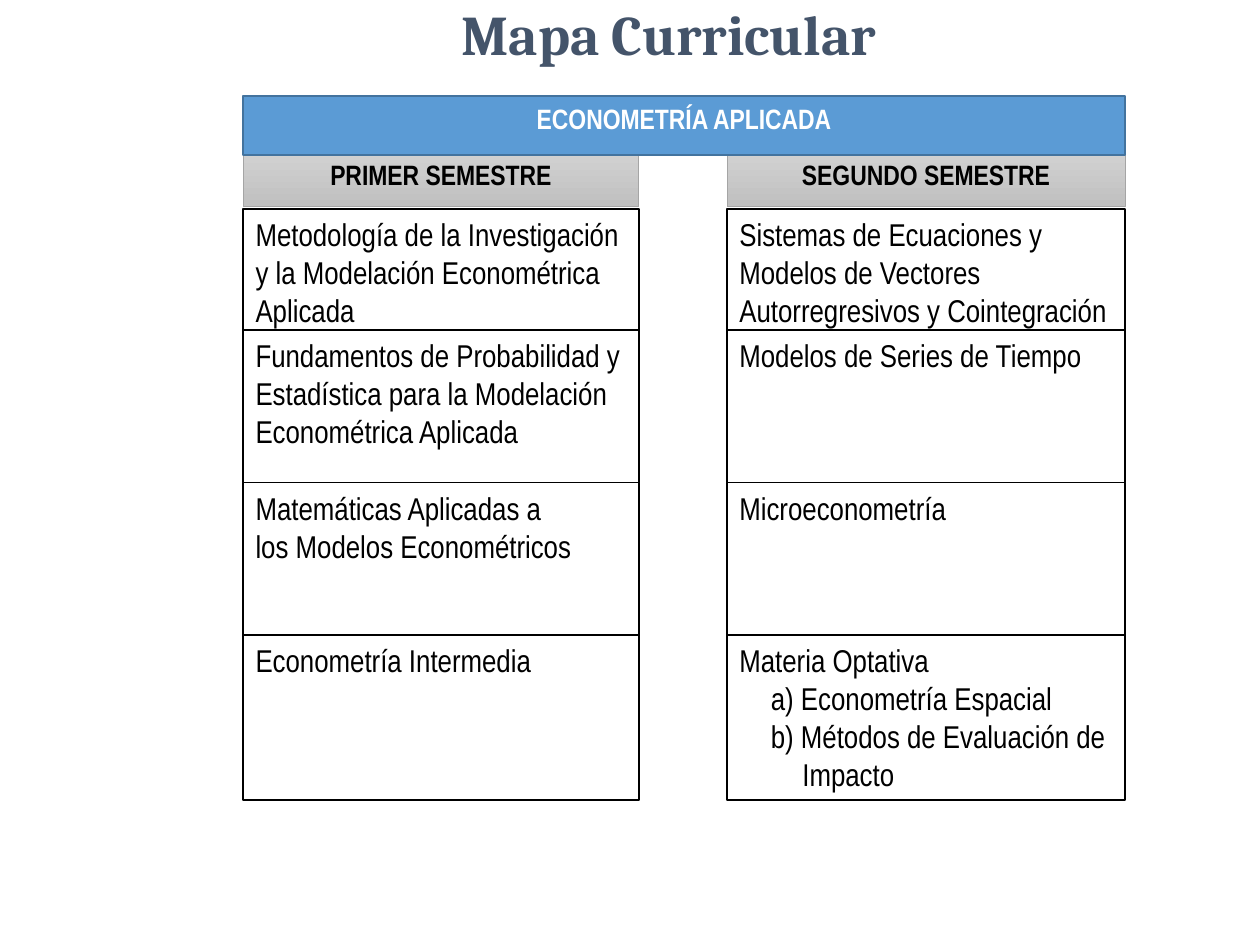
"""Build the curriculum map slide: a banner over two semester columns."""
import pptx
import pptx.util
import pptx.dml.color
import pptx.enum.shapes
import pptx.enum.text

TITLE = "Mapa Curricular"
BANNER = "ECONOMETRÍA APLICADA"
TERMS = [
    ("PRIMER SEMESTRE", 1.93, 3.14, [
        ["Metodología de la Investigación y la Modelación Econométrica Aplicada"],
        ["Fundamentos de Probabilidad y Estadística para la Modelación Econométrica Aplicada"],
        ["Matemáticas Aplicadas a", "los Modelos Econométricos"],
        ["Econometría Intermedia"],
    ]),
    ("SEGUNDO SEMESTRE", 5.77, 3.16, [
        ["Sistemas de Ecuaciones y Modelos de Vectores Autorregresivos y Cointegración"],
        ["Modelos de Series de Tiempo"],
        ["Microeconometría"],
        ["Materia Optativa", "a) Econometría Espacial", "b) Métodos de Evaluación de Impacto"],
    ]),
]
EDGES = [1.66, 2.62, 3.83, 5.04, 6.35]
THEME = {
    "head": "Cambria", "body": "Arial Narrow",
    "title": 32, "label": 16, "text": 18,
    "navy": "44546A", "blue": "5B9BD5", "rim": "43739E",
    "white": "FFFFFF", "black": "000000",
    "light": "D2D2D2", "dark": "C0C0C0", "gray": "A5A5A5",
}
Inches = pptx.util.Inches
Align = pptx.enum.text.PP_ALIGN
Anchor = pptx.enum.text.MSO_ANCHOR


def color(name):
    return pptx.dml.color.RGBColor.from_string(THEME[name])


def write(frame, lines, size, ink, face="body", bold=False, mid=False):
    frame.word_wrap = True
    frame.vertical_anchor = Anchor.TOP
    for i, line in enumerate(lines):
        para = frame.paragraphs[0] if i == 0 else frame.add_paragraph()
        para.text = line
        para.alignment = Align.CENTER if mid else Align.LEFT
        if line.startswith(("a) ", "b) ")):
            props = para._p.get_or_add_pPr()
            props.set("marL", str(Inches(0.5)))
            props.set("indent", str(Inches(-0.25)))
        font = para.font
        font.name, font.size, font.bold = THEME[face], pptx.util.Pt(THEME[size]), bold
        font.color.rgb = color(ink)


def box(slide, place, fill, rim, width=1):
    kind = pptx.enum.shapes.MSO_SHAPE.RECTANGLE
    shape = slide.shapes.add_shape(kind, *map(Inches, place))
    shape.shadow.inherit = False
    if isinstance(fill, tuple):
        shape.fill.gradient()
        shape.fill.gradient_angle = 270
        for stop, name in zip(shape.fill.gradient_stops, fill):
            stop.color.rgb = color(name)
    else:
        shape.fill.solid()
        shape.fill.fore_color.rgb = color(fill)
    shape.line.color.rgb = color(rim)
    shape.line.width = pptx.util.Pt(width)
    return shape.text_frame


def main():
    deck = pptx.Presentation()
    deck.slide_width, deck.slide_height = Inches(10), Inches(7.5)
    slide = deck.slides.add_slide(deck.slide_layouts[6])

    title = slide.shapes.add_textbox(*map(Inches, (1.21, 0, 8.2, 0.59))).text_frame
    write(title, [TITLE], "title", "navy", "head", True, True)
    title.vertical_anchor = Anchor.MIDDLE
    title.paragraphs[0].line_spacing = 0.9

    for name, left, width, cells in TERMS:
        head = box(slide, (left, 1.2, width, 0.44), ("light", "dark"), "gray", 0.5)
        write(head, [name], "label", "black", bold=True, mid=True)
        for top, end, lines in zip(EDGES, EDGES[1:], cells):
            cell = box(slide, (left, top, width, end - top), "white", "black")
            write(cell, lines, "text", "black")

    start = TERMS[0][1]
    span = TERMS[-1][1] + TERMS[-1][2] - start
    banner = box(slide, (start, 0.76, span, 0.47), "blue", "rim")
    write(banner, [BANNER], "label", "white", bold=True, mid=True)
    deck.save("out.pptx")


if __name__ == "__main__":
    main()
